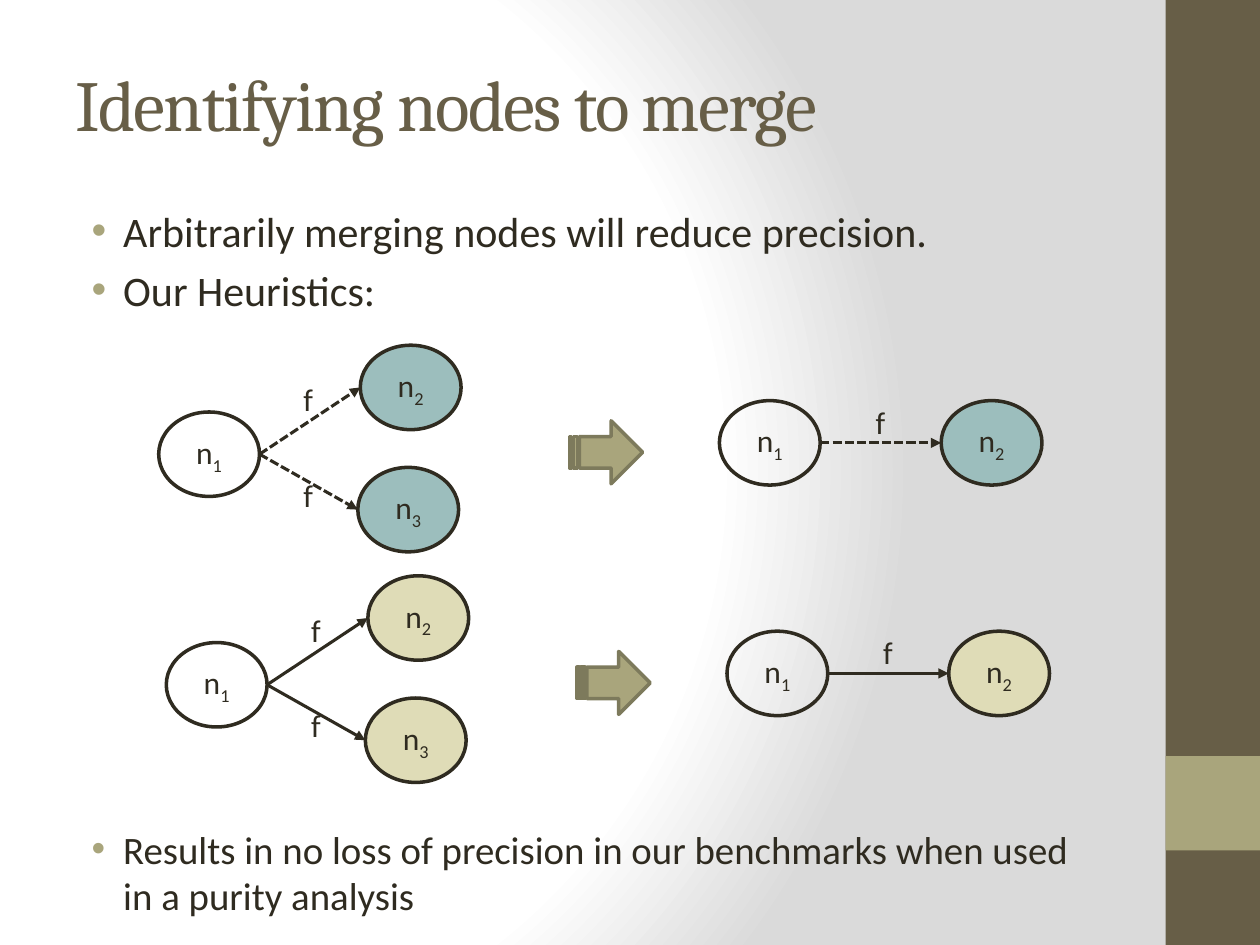
"""Build a slide on the heuristics for merging graph nodes."""
from lxml import etree
from pptx import Presentation
from pptx.dml.color import RGBColor
from pptx.enum.dml import MSO_LINE
from pptx.enum.shapes import MSO_CONNECTOR, MSO_SHAPE
from pptx.enum.text import MSO_ANCHOR, PP_ALIGN
from pptx.oxml import parse_xml
from pptx.oxml.ns import nsdecls, qn
from pptx.util import Inches, Pt

DASH = MSO_LINE.SQUARE_DOT
STRAIGHT = MSO_CONNECTOR.STRAIGHT
RECTANGLE, OVAL = MSO_SHAPE.RECTANGLE, MSO_SHAPE.OVAL
STRIPED_ARROW = MSO_SHAPE.STRIPED_RIGHT_ARROW
TOP, MIDDLE = MSO_ANCHOR.TOP, MSO_ANCHOR.MIDDLE
LEFT, CENTER = PP_ALIGN.LEFT, PP_ALIGN.CENTER

BROWN, OLIVE, OLIVE_EDGE, INK = "675E47", "A9A57C", "7D7A5C", "2F2B20"
NODE_WIDTH, NODE_HEIGHT = 0.8, 0.67

TITLE = "Identifying nodes to merge"
INTRODUCTION = ["Arbitrarily merging nodes will reduce precision.", "Our Heuristics:"]
CONCLUSION = ["Results in no loss of precision in our benchmarks when used in a purity analysis"]
SIDEBAR = [(0, 7.5, BROWN), (6, 0.75, OLIVE)]

GRAPHS = [
    {"nodes": [("1", 1.26, 3.27), ("2", 2.86, 2.74), ("3", 2.84, 3.71)],
     "labels": [(2.31, 2.99), (2.31, 3.75)]},
    {"nodes": [("1", 5.71, 3.18), ("2", 7.47, 3.18)],
     "labels": [(6.85, 3.17)]},
]
MERGE_ARROW = (4.52, 3.34, 0.58, 0.5)
HEURISTICS = [
    {"shift": (0, 0), "fill": "9CBEBD", "dash": DASH},
    {"shift": (0.06, 1.83), "fill": "DFDCB7", "dash": None},
]

BACKGROUND = f"""<p:bg {nsdecls('p', 'a')}><p:bgPr><a:gradFill rotWithShape="1"><a:gsLst>
<a:gs pos="0"><a:srgbClr val="FFFFFF"/></a:gs>
<a:gs pos="75000"><a:srgbClr val="FFFFFF"/></a:gs>
<a:gs pos="100000"><a:srgbClr val="DADADA"/></a:gs></a:gsLst>
<a:path path="circle"><a:fillToRect l="20000" t="50000" r="100000" b="50000"/></a:path>
</a:gradFill><a:effectLst/></p:bgPr></p:bg>"""


def color(value):
    """Return the colour for a hex string."""
    return RGBColor.from_string(value)


def add_bullet(paragraph):
    """Give a paragraph a hanging olive bullet."""
    paragraph.space_before = Pt(4.8)
    properties = paragraph._p.get_or_add_pPr()
    properties.set("marL", str(Inches(0.38)))
    properties.set("indent", str(Inches(-0.25)))
    bullet_color = etree.SubElement(properties, qn("a:buClr"))
    etree.SubElement(bullet_color, qn("a:srgbClr")).set("val", OLIVE)
    etree.SubElement(properties, qn("a:buFont")).set("typeface", "Arial")
    etree.SubElement(properties, qn("a:buChar")).set("char", "•")


def write(shape, lines, size=18, font="Calibri", ink=INK, anchor=MIDDLE, align=LEFT,
          wrap=True, bullets=False, spacing=0, subscript=""):
    """Write formatted lines into a shape, with an optional subscript."""
    frame = shape.text_frame
    frame.word_wrap = wrap
    frame.vertical_anchor = anchor
    for index, line in enumerate(lines):
        paragraph = frame.add_paragraph() if index else frame.paragraphs[0]
        paragraph.alignment = align
        if bullets:
            add_bullet(paragraph)
        for text, baseline in ((line, 0), (subscript, -25000)):
            if not text:
                continue
            run = paragraph.add_run()
            run.text = text
            run.font.size = Pt(size)
            run.font.name = font
            run.font.color.rgb = color(ink)
            if baseline:
                run.font._element.set("baseline", str(baseline))
            if spacing:
                run.font._element.set("spc", str(spacing))


def add_text(slide, box, lines, **text_format):
    """Add a text box holding the given lines."""
    shape = slide.shapes.add_textbox(*map(Inches, box))
    write(shape, lines, **text_format)


def add_shape(slide, kind, box, fill=None, edge=None):
    """Add a flat preset shape with optional fill and outline."""
    shape = slide.shapes.add_shape(kind, *map(Inches, box))
    shape.shadow.inherit = False
    if fill:
        shape.fill.solid()
        shape.fill.fore_color.rgb = color(fill)
    else:
        shape.fill.background()
    if edge:
        shape.line.color.rgb = color(edge)
        shape.line.width = Pt(2)
    else:
        shape.line.fill.background()
    return shape


def add_edge(slide, start, end, dash):
    """Add an arrow between two points."""
    connector = slide.shapes.add_connector(STRAIGHT, *map(Inches, start + end))
    connector.line.color.rgb = color(INK)
    connector.line.width = Pt(1.75)
    if dash:
        connector.line.dash_style = dash
    etree.SubElement(connector.line._get_or_add_ln(), qn("a:tailEnd")).set("type", "triangle")
    etree.SubElement(connector._element.spPr, qn("a:effectLst"))


def add_graph(slide, graph, shift, fill, dash):
    """Draw a source node with labelled edges to its target nodes."""
    across, down = shift
    nodes = [(name, left + across, top + down) for name, left, top in graph["nodes"]]
    for name, left, top in nodes:
        node = add_shape(slide, OVAL, (left, top, NODE_WIDTH, NODE_HEIGHT),
                         fill=None if name == "1" else fill, edge=INK)
        write(node, ["n"], subscript=name, align=CENTER)
    _, source_left, source_top = nodes[0]
    start = (source_left + NODE_WIDTH, source_top + NODE_HEIGHT / 2)
    for _, left, top in nodes[1:]:
        add_edge(slide, start, (left, top + NODE_HEIGHT / 2), dash)
    for left, top in graph["labels"]:
        add_text(slide, (left + across, top + down, 0.29, 0.35), ["f"], wrap=False)


def main():
    """Assemble and save the slide."""
    presentation = Presentation()
    presentation.slide_width, presentation.slide_height = Inches(10), Inches(7.5)
    slide = presentation.slides.add_slide(presentation.slide_layouts[6])
    slide._element.cSld.insert(0, parse_xml(BACKGROUND))
    for top, height, fill in SIDEBAR:
        add_shape(slide, RECTANGLE, (9.25, top, 0.75, height), fill=fill)
    add_text(slide, (0.5, 0.3, 8.33, 1.03), [TITLE], size=41, font="Cambria",
             ink=BROWN, spacing=-100)
    add_text(slide, (0.5, 1.58, 8.33, 1.25), INTRODUCTION, size=24, anchor=TOP, bullets=True)
    for heuristic in HEURISTICS:
        for graph in GRAPHS:
            add_graph(slide, graph, **heuristic)
        left, top, width, height = MERGE_ARROW
        across, down = heuristic["shift"]
        add_shape(slide, STRIPED_ARROW, (left + across, top + down, width, height),
                  fill=OLIVE, edge=OLIVE_EDGE)
    add_text(slide, (0.5, 6.5, 8.33, 0.75), CONCLUSION, size=22.2, anchor=TOP, bullets=True)
    presentation.save("out.pptx")


if __name__ == "__main__":
    main()
